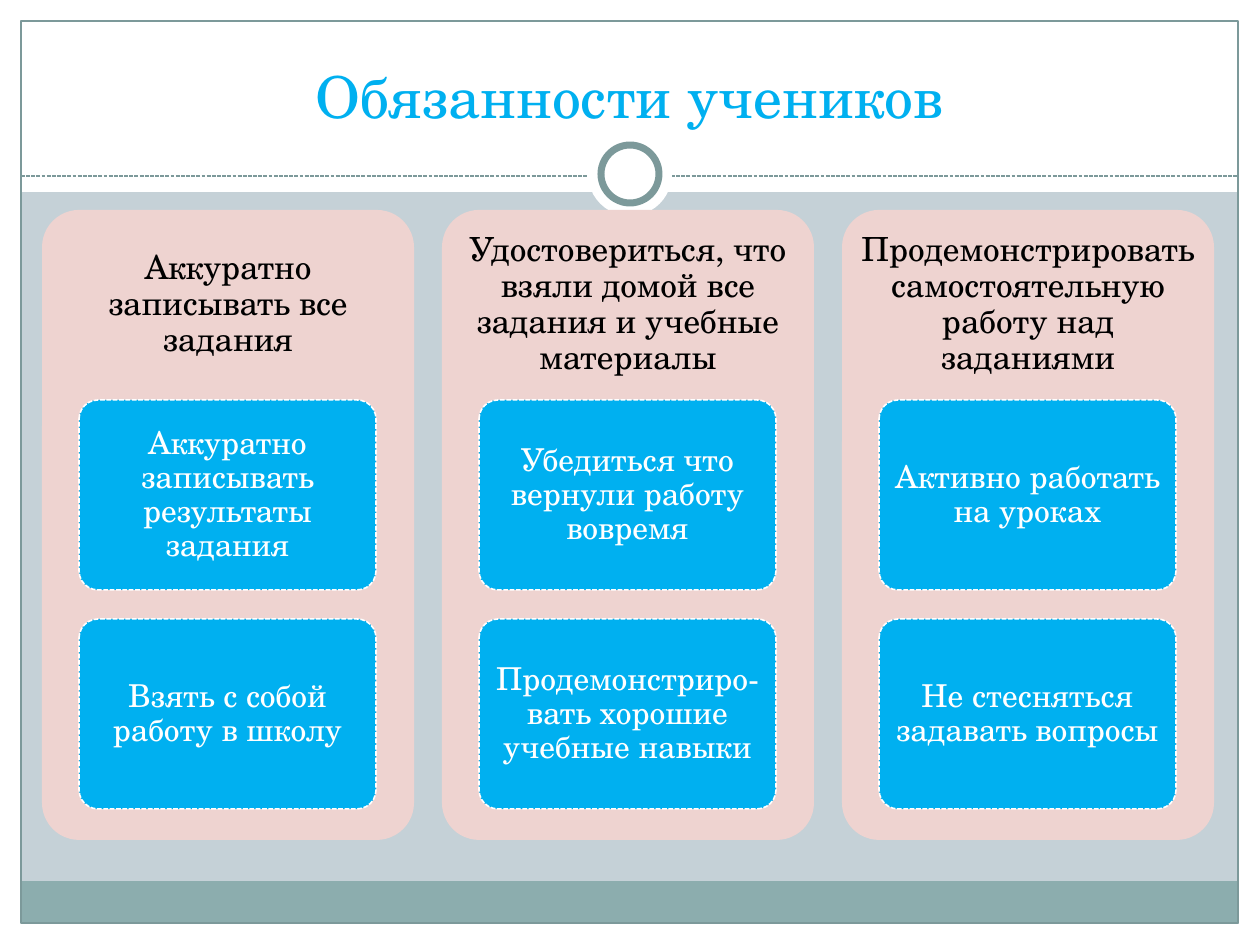
from dataclasses import dataclass

from lxml.etree import SubElement
from pptx import Presentation
from pptx.dml.color import RGBColor
from pptx.enum.dml import MSO_LINE
from pptx.enum.shapes import MSO_CONNECTOR, MSO_SHAPE
from pptx.enum.text import MSO_ANCHOR, PP_ALIGN
from pptx.oxml.ns import qn
from pptx.util import Emu, Pt

EMU_PER_PX = 914400 / 126
WIDTH, HEIGHT = 1260, 945
FONT = "TeX Gyre Schola"
COLORS = {
    "background": "C5D1D7",
    "white": "FFFFFF",
    "footer": "8CADAE",
    "frame": "7C999A",
    "card": "EED3D0",
    "accent": "00B0F0",
    "black": "000000",
}


@dataclass(frozen=True)
class Box:
    left: int
    top: int
    width: int
    height: int

    def emu(self) -> list[Emu]:
        return [px(n) for n in (self.left, self.top, self.width, self.height)]


@dataclass(frozen=True)
class Duty:
    heading: str
    tasks: tuple[str, ...]


DUTIES = (
    Duty("Аккуратно записывать все задания",
         ("Аккуратно записывать результаты задания",
          "Взять с собой работу в школу")),
    Duty("Удостовериться, что взяли домой все задания и учебные материалы",
         ("Убедиться что вернули работу вовремя",
          "Продемонстриро-вать хорошие учебные навыки")),
    Duty("Продемонстрировать самостоятельную работу над заданиями",
         ("Активно работать на уроках",
          "Не стесняться задавать вопросы")),
)
CARD = Box(42, 210, 372, 630)
CARD_PITCH = 400
HEADING_HEIGHT = 189
TASK = Box(37, 190, 297, 190)
TASK_PITCH = 219


def px(length: int) -> Emu:
    return Emu(round(length * EMU_PER_PX))


def rgb(name: str) -> RGBColor:
    return RGBColor.from_string(COLORS[name])


def style_line(line, color: str, points: float, dashed: bool = False) -> None:
    line.color.rgb = rgb(color)
    line.width = Pt(points)
    if dashed:
        line.dash_style = MSO_LINE.SQUARE_DOT


def add_panel(slide, kind, box: Box, fill: str | None, line: str | None = None,
              points: float = 0.75, dashed: bool = False):
    panel = slide.shapes.add_shape(kind, *box.emu())
    panel.shadow.inherit = False
    if fill:
        panel.fill.solid()
        panel.fill.fore_color.rgb = rgb(fill)
    else:
        panel.fill.background()
    if line:
        style_line(panel.line, line, points, dashed)
    else:
        panel.line.fill.background()
    return panel


def write(holder, text: str, size: int, color: str, anchor, inset: int,
          line_spacing: float = 0.9) -> None:
    frame = holder.text_frame
    frame.text = text
    frame.word_wrap = True
    frame.vertical_anchor = anchor
    frame.margin_left = frame.margin_right = px(inset)
    frame.margin_top = frame.margin_bottom = px(inset)
    paragraph = frame.paragraphs[0]
    paragraph.alignment = PP_ALIGN.CENTER
    paragraph.line_spacing = line_spacing
    font = paragraph.runs[0].font
    font.name = FONT
    font.size = Pt(size)
    font.color.rgb = rgb(color)


def add_decor(slide) -> None:
    rect, oval = MSO_SHAPE.RECTANGLE, MSO_SHAPE.OVAL
    for margin in (Box(0, 924, WIDTH, 21), Box(0, 0, WIDTH, 192),
                   Box(0, 0, 21, HEIGHT), Box(1239, 0, 21, HEIGHT)):
        add_panel(slide, rect, margin, "white")
    add_panel(slide, rect, Box(21, 881, 1217, 43), "footer")
    add_panel(slide, rect, Box(21, 21, 1217, 902), None, "frame")
    divider = slide.shapes.add_connector(
        MSO_CONNECTOR.STRAIGHT, px(21), px(176), px(1238), px(176))
    style_line(divider.line, "frame", 0.75, dashed=True)
    SubElement(divider.element.spPr, qn("a:effectLst"))
    add_panel(slide, oval, Box(588, 132, 84, 84), "white")
    add_panel(slide, oval, Box(601, 145, 58, 58), "white", "frame", 4)


def add_title(slide, text: str) -> None:
    title = slide.shapes.title
    title.left, title.top, title.width, title.height = Box(42, 31, 1176, 105).emu()
    write(title, text, 33, "accent", MSO_ANCHOR.BOTTOM, 6, 1.0)
    slide.shapes.element.append(title.element)


def add_duty(slide, duty: Duty, left: int) -> None:
    rounded = MSO_SHAPE.ROUNDED_RECTANGLE
    card = add_panel(slide, rounded, Box(left, CARD.top, CARD.width, CARD.height), "card")
    card.adjustments[0] = 0.1
    heading = slide.shapes.add_textbox(
        *Box(left, CARD.top, CARD.width, HEADING_HEIGHT).emu())
    write(heading, duty.heading, 19, "black", MSO_ANCHOR.MIDDLE, 10)
    for row, text in enumerate(duty.tasks):
        box = Box(left + TASK.left, CARD.top + TASK.top + row * TASK_PITCH,
                  TASK.width, TASK.height)
        task = add_panel(slide, rounded, box, "accent", "white", 0.9, dashed=True)
        task.adjustments[0] = 0.1
        write(task, text, 18, "white", MSO_ANCHOR.MIDDLE, 1)


def main() -> None:
    deck = Presentation()
    deck.slide_width, deck.slide_height = px(WIDTH), px(HEIGHT)
    slide = deck.slides.add_slide(deck.slide_layouts[5])
    slide.background.fill.solid()
    slide.background.fill.fore_color.rgb = rgb("background")
    add_decor(slide)
    add_title(slide, "Обязанности учеников")
    for column, duty in enumerate(DUTIES):
        add_duty(slide, duty, CARD.left + column * CARD_PITCH)
    deck.save("out.pptx")


if __name__ == "__main__":
    main()
